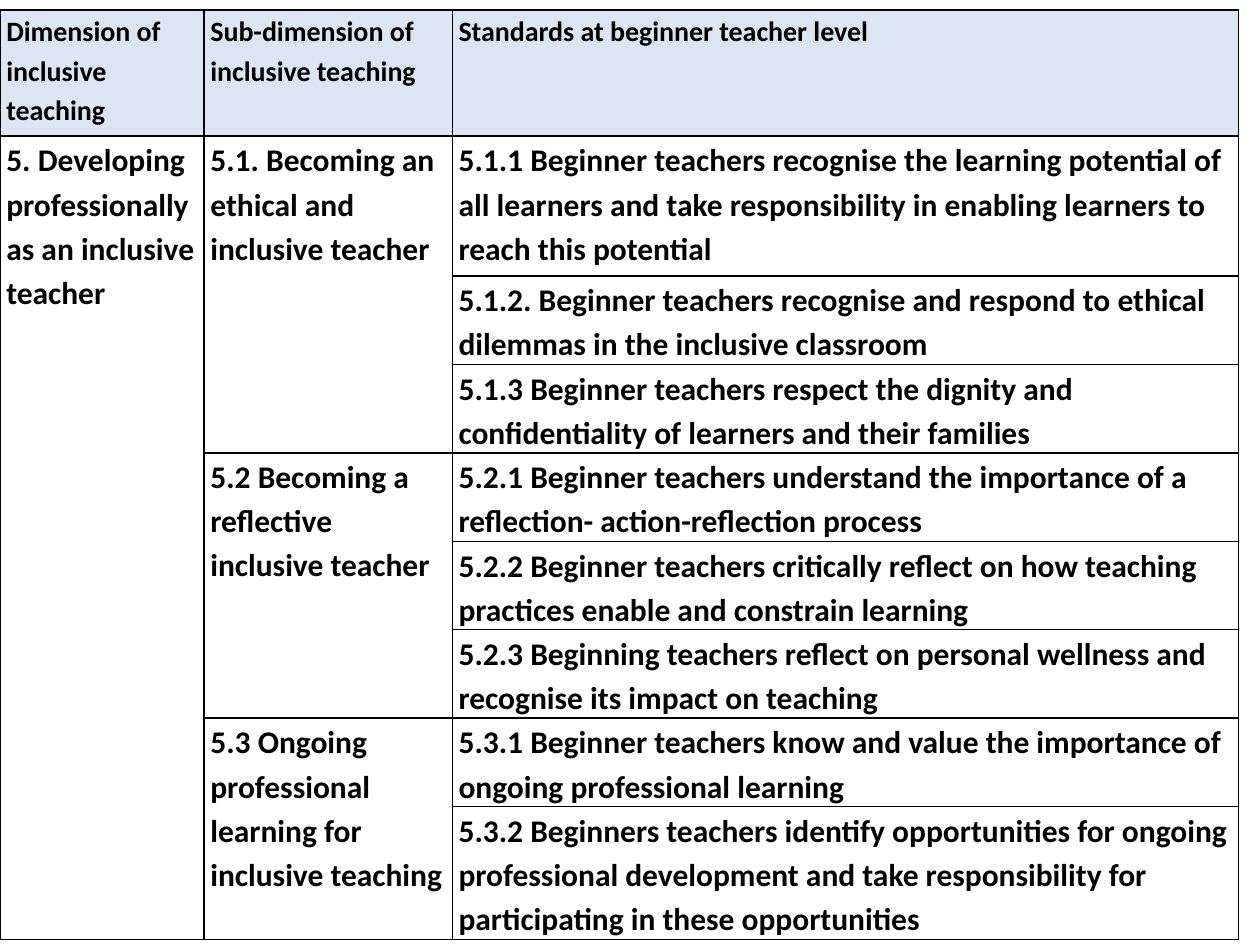
from lxml import etree
from pptx import Presentation, util as u
from pptx.dml.color import RGBColor
from pptx.oxml.ns import qn

COLOURS = {"ink": "000000", "header": "DCE6F2"}
COLUMN_WIDTHS = [1.62, 1.97, 6.24]
ROW_HEIGHTS = [1, 1.11] + [0.61] * 5 + [0.7, 0.92]

HEADINGS = [
    "Dimension of inclusive teaching",
    "Sub-dimension of inclusive teaching",
    "Standards at beginner teacher level",
]
DIMENSION = "5. Developing professionally as an inclusive teacher"
# Each sub-dimension with its standards
SUB_DIMENSIONS = [
    ("5.1. Becoming an ethical and inclusive teacher", [
        "5.1.1 Beginner teachers recognise the learning potential of all learners "
        "and take responsibility in enabling learners to reach this potential",
        "5.1.2. Beginner teachers recognise and respond to ethical dilemmas in the "
        "inclusive classroom",
        "5.1.3 Beginner teachers respect the dignity and confidentiality of learners "
        "and their families",
    ]),
    ("5.2 Becoming a reflective inclusive teacher", [
        "5.2.1 Beginner teachers understand the importance of a reflection- "
        "action-reflection process",
        "5.2.2 Beginner teachers critically reflect on how teaching practices enable "
        "and constrain learning",
        "5.2.3 Beginning teachers reflect on personal wellness and recognise its "
        "impact on teaching",
    ]),
    ("5.3 Ongoing professional learning for inclusive teaching", [
        "5.3.1 Beginner teachers know and value the importance of ongoing "
        "professional learning",
        "5.3.2 Beginners teachers identify opportunities for ongoing professional "
        "development and take responsibility for participating in these opportunities",
    ]),
]


def style_cell(cell, fill=None):
    """Set margins, borders and fill of one cell."""
    cell.margin_left = cell.margin_right = u.Inches(0.05)
    cell.margin_top = cell.margin_bottom = 0
    properties = cell._tc.get_or_add_tcPr()
    for side in ("a:lnL", "a:lnR", "a:lnT", "a:lnB"):
        line = etree.SubElement(properties, qn(side), w=str(u.Pt(1)))
        solid = etree.SubElement(line, qn("a:solidFill"))
        etree.SubElement(solid, qn("a:srgbClr"), val=COLOURS["ink"])
    if fill:
        cell.fill.solid()
        cell.fill.fore_color.rgb = RGBColor.from_string(COLOURS[fill])
    else:
        cell.fill.background()


def write_cell(cell, wording, size, gap=0):
    """Write bold text with the given size and paragraph spacing."""
    para = cell.text_frame.paragraphs[0]
    para.text = wording
    para.line_spacing = 1.15
    para.space_before = para.space_after = u.Pt(gap)
    font = para.runs[0].font
    font.name, font.size, font.bold = "Calibri", u.Pt(size), True
    font.color.rgb = RGBColor.from_string(COLOURS["ink"])


def add_standards_table(page, left, top, width, height):
    frame = page.shapes.add_table(len(ROW_HEIGHTS), len(COLUMN_WIDTHS),
                                  left, top, width, height)
    table = frame.table
    table.horz_banding = False
    for column, column_width in zip(table.columns, COLUMN_WIDTHS):
        column.width = u.Inches(column_width)
    for row, row_height in zip(table.rows, ROW_HEIGHTS):
        row.height = u.Inches(row_height)
    for row_index, row in enumerate(table.rows):
        for cell in row.cells:
            style_cell(cell, "header" if row_index == 0 else None)

    # Header row
    for column_index, heading in enumerate(HEADINGS):
        write_cell(table.cell(0, column_index), heading, 16)

    # Dimension spans every body row
    last_row = len(ROW_HEIGHTS) - 1
    table.cell(1, 0).merge(table.cell(last_row, 0))
    write_cell(table.cell(1, 0), DIMENSION, 18, 4)

    # Each sub-dimension spans its own standards
    first = 1
    for sub_dimension, standards in SUB_DIMENSIONS:
        table.cell(first, 1).merge(table.cell(first + len(standards) - 1, 1))
        write_cell(table.cell(first, 1), sub_dimension, 18, 4)
        for offset, standard in enumerate(standards):
            write_cell(table.cell(first + offset, 2), standard, 18, 4)
        first += len(standards)


def main():
    deck = Presentation()
    deck.slide_width, deck.slide_height = u.Inches(10), u.Inches(7.5)
    page = deck.slides.add_slide(deck.slide_layouts[6])
    add_standards_table(page, u.Inches(0), u.Inches(0.08),
                        u.Inches(sum(COLUMN_WIDTHS)), u.Inches(7.39))
    deck.save("out.pptx")


if __name__ == "__main__":
    main()
